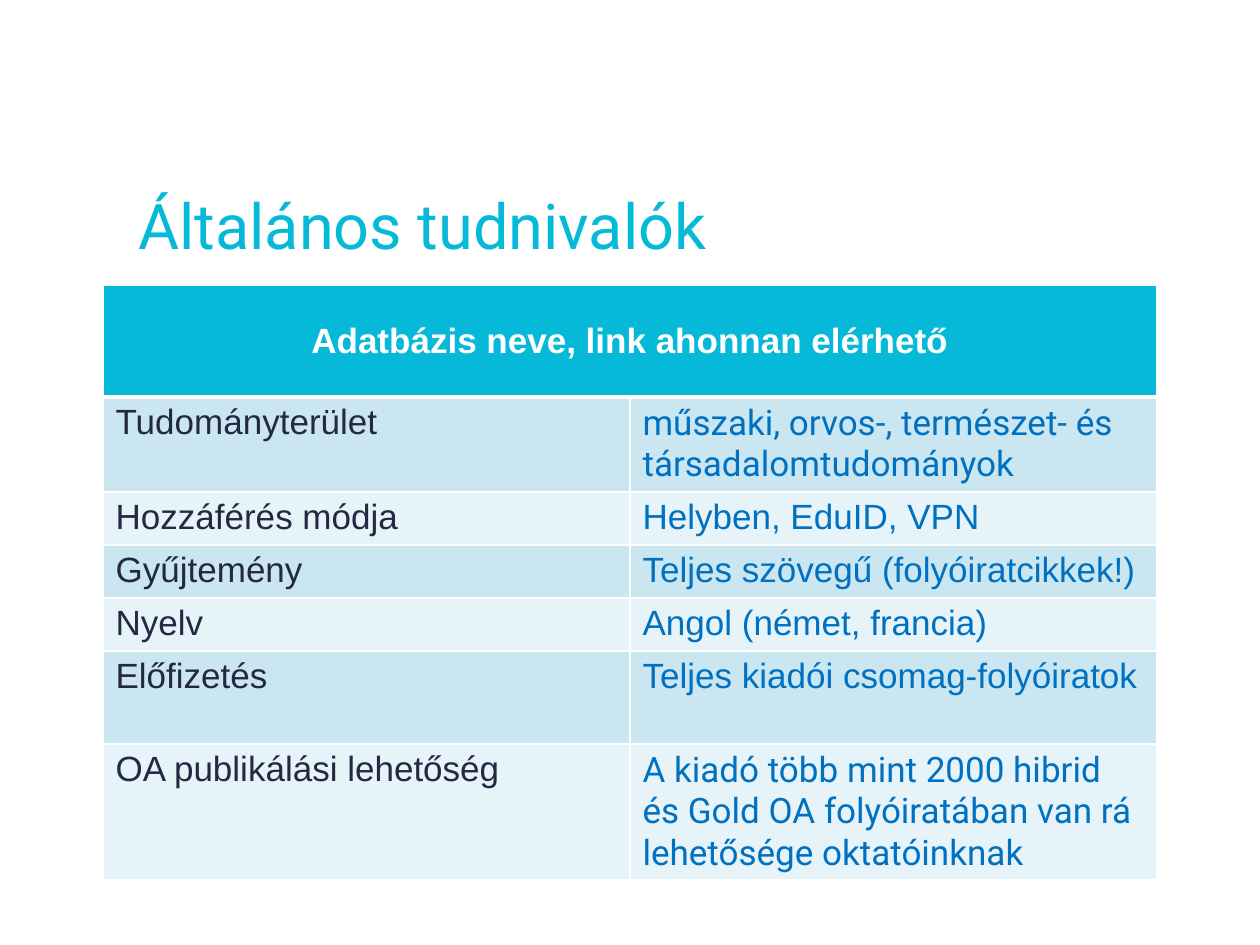
from lxml.etree import SubElement
from pptx import Presentation
from pptx.dml.color import RGBColor
from pptx.enum.text import MSO_ANCHOR, PP_ALIGN
from pptx.oxml.ns import qn
from pptx.util import Emu, Pt

CYAN = RGBColor(0x07, 0xB9, 0xD9)
BLUE = RGBColor(0x00, 0x70, 0xC0)
NAVY = RGBColor(0x24, 0x29, 0x43)
WHITE = RGBColor(0xFF, 0xFF, 0xFF)
BANDS = [RGBColor(0xCA, 0xE6, 0xF1), RGBColor(0xE6, 0xF3, 0xF8)]

HEADING = "Adatbázis neve, link ahonnan elérhető"
# label, value, font of the value, row height in px
FACTS = [
    ("Tudományterület", "műszaki, orvos-, természet- és társadalomtudományok", "Roboto", 93),
    ("Hozzáférés módja", "Helyben, EduID, VPN", "Arial", 53),
    ("Gyűjtemény", "Teljes szövegű (folyóiratcikkek!)", "Arial", 53),
    ("Nyelv", "Angol (német, francia)", "Arial", 53),
    ("Előfizetés", "Teljes kiadói csomag-folyóiratok", "Arial", 93),
    ("OA publikálási lehetőség",
     "A kiadó több mint 2000 hibrid és Gold OA folyóiratában van rá lehetősége oktatóinknak",
     "Roboto", 134),
]
HEADING_HEIGHT = 112


def px(length):
    return Emu(round(length * 914400 / 126))


def style_font(paragraph, name, size, color, bold=False):
    font = paragraph.font
    font.name, font.size, font.bold = name, Pt(size), bold
    font.color.rgb = color


def add_borders(cell, bottom=1):
    """Draw white cell borders; the bottom width is in points."""
    properties = cell._tc.get_or_add_tcPr()
    for side, width in (("L", 1), ("R", 1), ("T", 1), ("B", bottom)):
        line = SubElement(properties, qn(f"a:ln{side}"), w=str(Pt(width)))
        fill = SubElement(line, qn("a:solidFill"))
        SubElement(fill, qn("a:srgbClr"), val=str(WHITE))


def fill_cell(cell, text, background, font_name, color, bold=False, bottom=1):
    add_borders(cell, bottom)
    cell.fill.solid()
    cell.fill.fore_color.rgb = background
    cell.text = text
    style_font(cell.text_frame.paragraphs[0], font_name, 20, color, bold)


def add_title(slide, left, top, width, height):
    frame = slide.shapes.add_textbox(px(left), px(top), px(width), px(height)).text_frame
    frame.word_wrap = True
    title = frame.paragraphs[0]
    title.text = "Általános tudnivalók"
    title.line_spacing = 0.9
    style_font(title, "Roboto", 36, CYAN)


def add_facts_table(slide, left, top, width):
    heights = [HEADING_HEIGHT] + [fact[-1] for fact in FACTS]
    table = slide.shapes.add_table(
        len(heights), 2, px(left), px(top), px(width), px(sum(heights))).table
    for row, height in zip(table.rows, heights):
        row.height = px(height)

    heading, spanned = table.cell(0, 0), table.cell(0, 1)
    heading.merge(spanned)
    add_borders(spanned, bottom=3)
    fill_cell(heading, HEADING, CYAN, "Arial", WHITE, bold=True, bottom=3)
    heading.vertical_anchor = MSO_ANCHOR.MIDDLE
    heading.text_frame.paragraphs[0].alignment = PP_ALIGN.CENTER

    for index, (label, value, value_font, _) in enumerate(FACTS):
        band = BANDS[index % 2]
        fill_cell(table.cell(index + 1, 0), label, band, "Arial", NAVY)
        fill_cell(table.cell(index + 1, 1), value, band, value_font, BLUE)


def main():
    presentation = Presentation()
    presentation.slide_width, presentation.slide_height = px(1260), px(945)
    slide = presentation.slides.add_slide(presentation.slide_layouts[6])
    add_facts_table(slide, 103, 285, 1054)
    add_title(slide, 126, 189, 774, 76)
    presentation.save("out.pptx")


if __name__ == "__main__":
    main()
